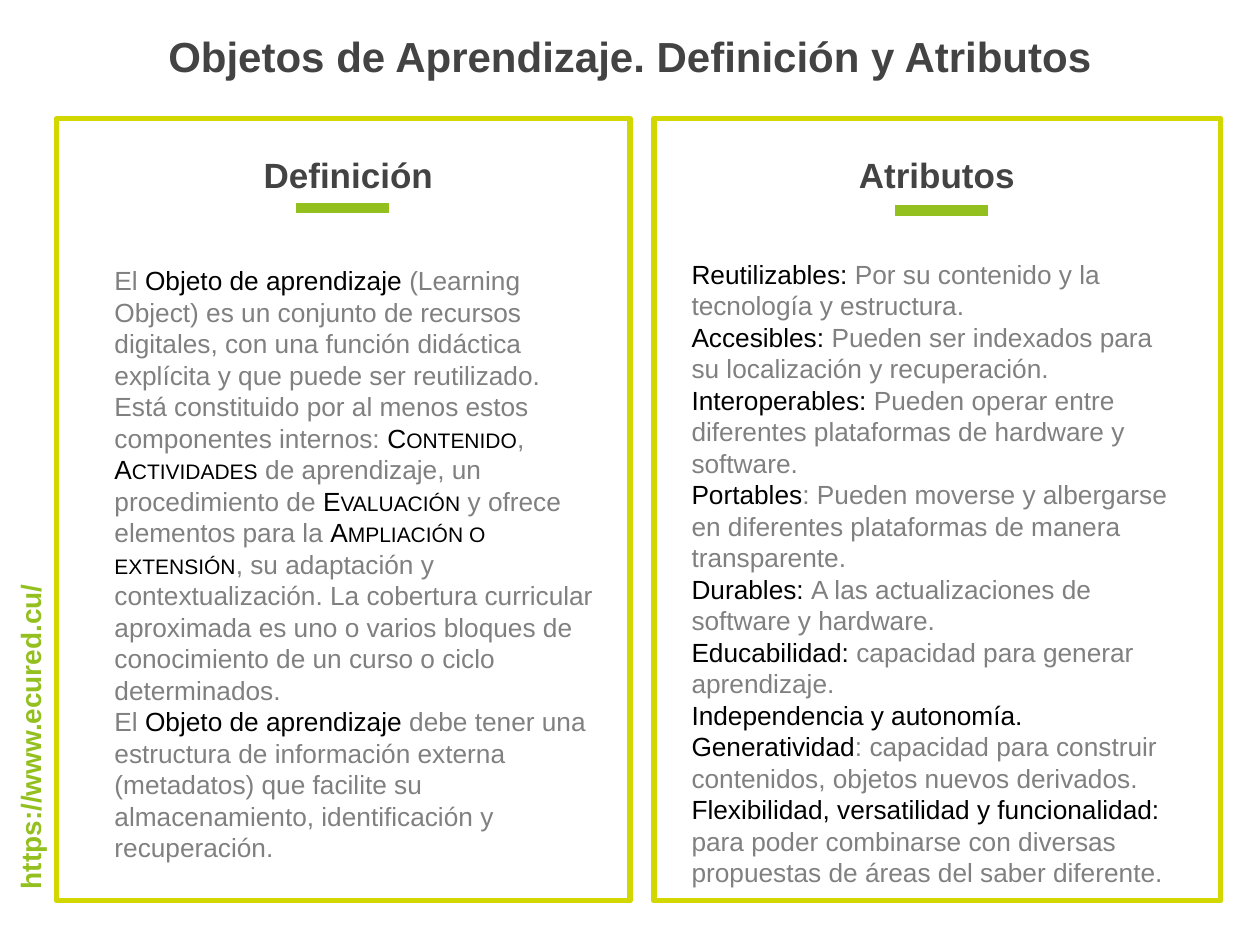
from lxml.etree import SubElement
from pptx import Presentation
from pptx.dml.color import RGBColor
from pptx.enum.shapes import MSO_CONNECTOR as Connector, MSO_SHAPE as Shape
from pptx.enum.text import MSO_ANCHOR as Anchor, PP_ALIGN as Align
from pptx.oxml.ns import qn
from pptx.util import Pt

BLACK, DARK, GRAY = "000000", "434343", "808080"
LIME, GREEN = "D2D700", "93C01F"


def color(value):
    return RGBColor.from_string(value)


def add_text(page, place, paragraphs, size, ink, bold=False, inset=7.2,
             anchor=Anchor.TOP, align=Align.LEFT, spacing=1.0):
    box = page.shapes.add_textbox(*map(Pt, place))
    frame = box.text_frame
    frame_format = {"word_wrap": True, "vertical_anchor": anchor,
                    "margin_top": Pt(inset), "margin_bottom": Pt(inset)}
    for name, value in frame_format.items():
        setattr(frame, name, value)
    for index, text in enumerate(paragraphs):
        para = frame.add_paragraph() if index else frame.paragraphs[0]
        para.alignment, para.line_spacing = align, spacing
        for order, piece in enumerate(text.split("*")):
            if not piece:
                continue
            span = para.add_run()
            span.text = piece.lstrip("^")
            for name, value in {"name": "Arial", "size": Pt(size), "bold": bold}.items():
                setattr(span.font, name, value)
            span.font.color.rgb = color(BLACK if order % 2 else ink)
            if piece.startswith("^"):
                span.font._element.set("cap", "small")
    return box


deck = Presentation()
deck.slide_width, deck.slide_height = Pt(720), Pt(540)
page = deck.slides.add_slide(deck.slide_layouts[6])

definition = [
    "El *Objeto de aprendizaje *(Learning Object) es un conjunto de recursos digitales, "
    "con una función didáctica explícita y que puede ser reutilizado. Está constituido por "
    "al menos estos componentes internos: *^Contenido*, *^Actividades* de aprendizaje, un "
    "procedimiento de *^Evaluación* y ofrece elementos para la *^Ampliación o extensión*, "
    "su adaptación y contextualización. La cobertura curricular aproximada es uno o varios "
    "bloques de conocimiento de un curso o ciclo determinados.",
    "El *Objeto de aprendizaje* debe tener una estructura de información externa "
    "(metadatos) que facilite su almacenamiento, identificación y recuperación.",
]
attributes = [
    "*Reutilizables: *Por su contenido y la tecnología y estructura.",
    "*Accesibles: *Pueden ser indexados para su localización y recuperación.",
    "*Interoperables: *Pueden operar entre diferentes plataformas de hardware y software.",
    "*Portables*: Pueden moverse y albergarse en diferentes plataformas de manera transparente.",
    "*Durables: *A las actualizaciones de software y hardware.",
    "*Educabilidad: *capacidad para generar aprendizaje.",
    "*Independencia y autonomía.*",
    "*Generatividad*: capacidad para construir contenidos, objetos nuevos derivados.",
    "*Flexibilidad, versatilidad y funcionalidad: *para poder combinarse con diversas "
    "propuestas de áreas del saber diferente.",
]

columns = [
    ("Definición", 32.4, 327.6, 58.32, 169.2, 118.8,
     definition, (58.32, 144, 288.72, 344.16), 7.2),
    ("Atributos", 373.68, 324, 394.56, 511.2, 120.24,
     attributes, (388.08, 144, 288, 370.8), 3.6),
]
for heading, left, width, heading_left, rule_left, rule_top, body, place, inset in columns:
    panel = page.shapes.add_shape(Shape.RECTANGLE, Pt(left), Pt(67.68), Pt(width), Pt(447.12))
    panel.shadow.inherit = False
    panel.fill.background()
    panel.line.color.rgb = color(LIME)
    panel.line.width = Pt(3)

    rule = page.shapes.add_connector(Connector.STRAIGHT, Pt(rule_left), Pt(rule_top),
                                     Pt(rule_left + 53.28), Pt(rule_top))
    rule.line.color.rgb = color(GREEN)
    rule.line.width = Pt(6)
    SubElement(rule._element.spPr, qn("a:effectLst"))

    add_text(page, (heading_left, 70.56, 281.52, 48.24), [heading], 20, DARK, bold=True,
             anchor=Anchor.BOTTOM, align=Align.CENTER, spacing=1.15)
    add_text(page, place, body, 15, GRAY, inset=inset)

add_text(page, (0, 10.08, 720, 50.4), ["Objetos de Aprendizaje. Definición y Atributos"],
         24, DARK, bold=True, align=Align.CENTER)
address = add_text(page, (-139.68, 344.88, 313.92, 26.64), ["https://www.ecured.cu/"],
                   16, GREEN, bold=True, inset=3.6)
address.rotation = 270

deck.save("out.pptx")
